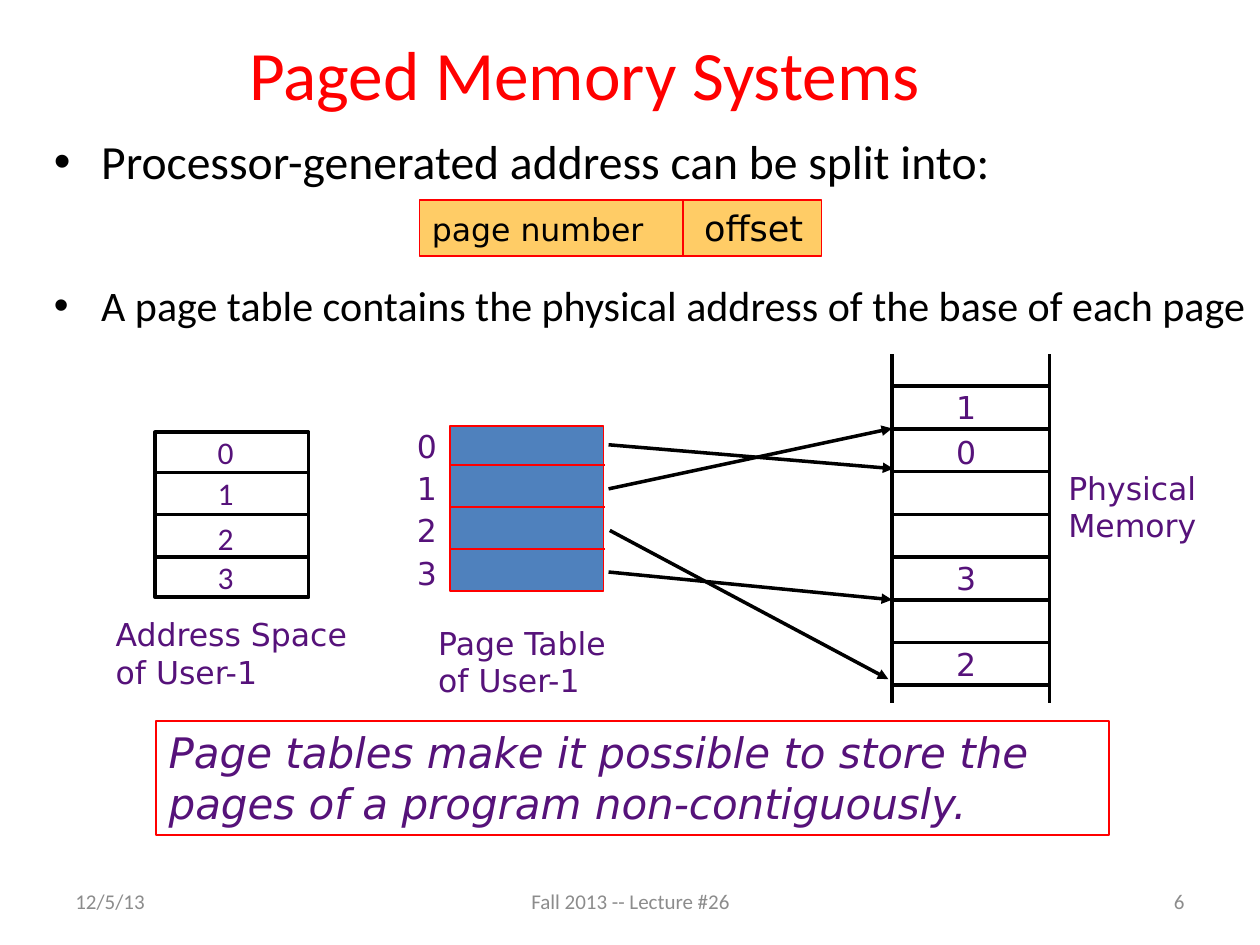
from lxml.etree import SubElement as Sub
from pptx import Presentation
from pptx.dml.color import RGBColor as RGB
from pptx.enum.shapes import MSO_CONNECTOR as Conn, MSO_SHAPE as Shape
from pptx.enum.text import MSO_ANCHOR as Anchor, PP_ALIGN as Align
from pptx.oxml.ns import qn
from pptx.util import Inches, Pt

INK = {"red": "FF0000", "black": "000000", "plum": "56127A",
       "blue": "4F81BD", "gold": "FFCC66", "gray": "8C8C8C"}
SANS, BODY = "DejaVu Sans", "Calibri"
COLS, ROWS = 100, 75


class Board:
    def __init__(self):
        self.deck = Presentation()
        self.deck.slide_width, self.deck.slide_height = Inches(10), Inches(7.5)
        self.slide = self.deck.slides.add_slide(self.deck.slide_layouts[6])
        self.shapes = self.slide.shapes

    def x(self, col):
        return round(self.deck.slide_width * col / COLS)

    def y(self, row):
        return round(self.deck.slide_height * row / ROWS)

    def area(self, col, row, wide, high):
        return self.x(col), self.y(row), self.x(wide), self.y(high)

    def label(self, frame, lines, size=18, face=SANS, ink="plum", align=Align.LEFT,
              anchor=Anchor.TOP, wrap=True, slant=False):
        frame.word_wrap = wrap
        frame.vertical_anchor = anchor
        frame.text = lines
        for para in frame.paragraphs:
            para.alignment = align
            font = para.font
            font.size, font.name, font.italic = Pt(size), face, slant
            font.color.rgb = RGB.from_string(INK[ink])
        return frame.paragraphs[0]

    def text(self, area, lines, **style):
        box = self.shapes.add_textbox(*self.area(*area))
        return self.label(box.text_frame, lines, **style)

    def bullet(self, area, line, size):
        para = self.text(area, line, size=size, face=BODY, ink="black")
        para.space_before = Pt(size * 0.2)
        props = para._p.get_or_add_pPr()
        props.set("marL", str(self.x(3.75)))
        props.set("indent", str(-self.x(3.75)))
        Sub(props, qn("a:buFont"), typeface="Arial")
        Sub(props, qn("a:buChar"), char="•")
        props.append(props.find(qn("a:defRPr")))

    def tab(self, para, col):
        props = para._p.get_or_add_pPr()
        tabs = Sub(props, qn("a:tabLst"))
        Sub(tabs, qn("a:tab"), pos=str(self.x(col)), algn="l")
        props.append(props.find(qn("a:defRPr")))

    def rect(self, area, ink, width=1, fill=None):
        box = self.shapes.add_shape(Shape.RECTANGLE, *self.area(*area))
        box.shadow.inherit = False
        box.line.color.rgb = RGB.from_string(INK[ink])
        box.line.width = Pt(width)
        if fill:
            box.fill.solid()
            box.fill.fore_color.rgb = RGB.from_string(INK[fill])
        else:
            box.fill.background()
        return box.text_frame

    def line(self, start, end, ink="black", width=2, arrow=False):
        link = self.shapes.add_connector(
            Conn.STRAIGHT, self.x(start[0]), self.y(start[1]),
            self.x(end[0]), self.y(end[1]))
        link.line.color.rgb = RGB.from_string(INK[ink])
        link.line.width = Pt(width)
        props = link._element.spPr
        if arrow:
            Sub(props.find(qn("a:ln")), qn("a:tailEnd"), type="triangle")
        Sub(props, qn("a:effectLst"))

    def rules(self, left, right, rows, **style):
        for row in rows:
            self.line((left, row), (right, row), **style)

    def digits(self, col, places, face=SANS):
        for digit, row in places:
            self.text((col, row, 3.6, 4), str(digit), face=face, wrap=False)


def main():
    board = Board()
    board.text((6.5, 1.7, 79.8, 8.1), "Paged Memory Systems", size=39.6, face=BODY,
               ink="red", align=Align.CENTER, anchor=Anchor.MIDDLE)
    board.bullet((3.3, 10, 83.3, 5.8), "Processor-generated address can be split into:", 27.2)
    board.bullet((3.3, 21.7, 96.7, 5.8),
                 "A page table contains the physical address of the base of each page", 24)

    split = board.rect((33.3, 15.9, 31.9, 4.4), "red", fill="gold")
    para = board.label(split, "page number\t", ink="black")
    run = para.add_run()
    run.text = "offset"
    run.font.size = Pt(20)
    board.tab(para, 21.6)
    board.line((54.2, 15.8), (54.2, 20.3), ink="red", width=0.75)

    step = 3.35
    board.rect((12.3, 34.3, 12.2, 13.1), "black", 2)
    board.rules(12.3, 24.5, [37.5 + step * i for i in range(3)])
    board.digits(16.3, enumerate((33.9, 37.1, 40.7, 43.8)), face=BODY)
    board.text((8.2, 48.3, 20.4, 7), "Address Space\nof User-1", wrap=False)

    board.rect((35.7, 33.8, 12.2, 13.1), "red", fill="blue")
    board.rules(35.7, 48, [36.9 + step * i for i in range(3)], ink="red", width=1)
    board.digits(32.1, [(i, 33.4 + step * i) for i in range(4)])
    board.text((33.8, 49, 16.6, 7), "Page Table\nof User-1", wrap=False)

    for start, end in (((48.4, 42.1), (70.5, 53.9)), ((48.3, 38.8), (70.8, 34)),
                       ((48.3, 35.3), (70.9, 37.2)), ((48.3, 45.4), (70.8, 47.6))):
        board.line(start, end, arrow=True)

    for col in (70.8, 83.3):
        board.line((col, 28.1), (col, 55.8))
    board.rules(70.9, 83.2, [30.65 + 3.39 * i for i in range(8)])
    board.digits(74.9, ((1, 30.3), (0, 33.9), (2, 50.7), (3, 43.9)))
    board.text((83.8, 36.7, 17.9, 7), "Physical Memory")

    note = board.rect((12.4, 57.2, 75.6, 9.1), "red")
    board.label(note, "Page tables make it possible to store the pages of a program "
                "non-contiguously.", size=24, slant=True)

    for col, wide, words, align in ((5, 23.3, "12/5/13", Align.LEFT),
                                    (34.2, 31.7, "Fall 2013 -- Lecture #26", Align.CENTER),
                                    (71.7, 23.3, "6", Align.RIGHT)):
        board.text((col, 69.5, wide, 4), words, size=12, face=BODY, ink="gray",
                   align=align, anchor=Anchor.MIDDLE)
    board.deck.save("out.pptx")


if __name__ == "__main__":
    main()
